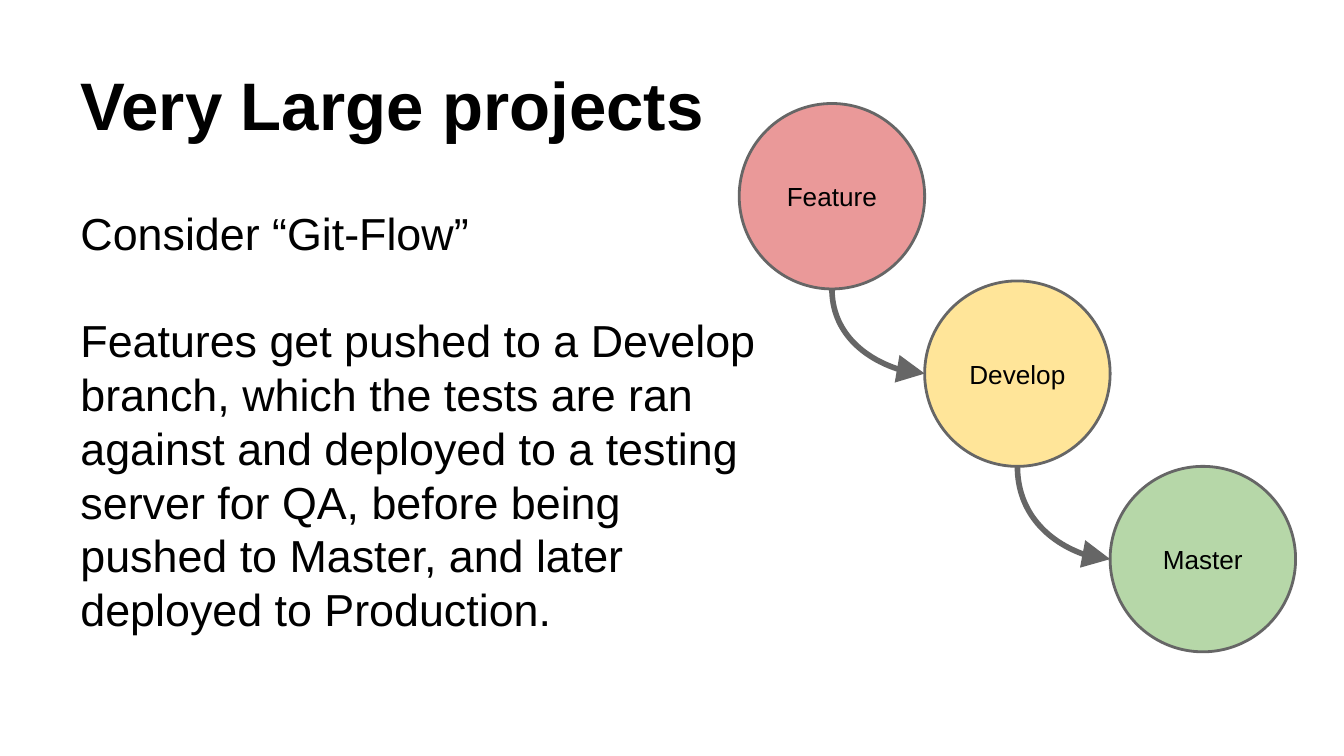
from dataclasses import dataclass

import lxml.etree
import pptx
import pptx.dml.color
import pptx.enum.shapes
import pptx.enum.text
import pptx.oxml.ns
import pptx.util

Inches = pptx.util.Inches
Pt = pptx.util.Pt
qn = pptx.oxml.ns.qn
PP_ALIGN = pptx.enum.text.PP_ALIGN
ANCHOR = pptx.enum.text.MSO_ANCHOR

SLIDE_WIDTH = 10
SLIDE_HEIGHT = SLIDE_WIDTH * 9 / 16
FONT = "Arial"
BLACK = "000000"
GRAY = "666666"
DIAMETER = 1.38
RADIUS = DIAMETER / 2
INSET = 0.1


@dataclass(frozen=True)
class Branch:
    name: str
    left: float
    top: float
    fill: str


@dataclass(frozen=True)
class TextBlock:
    left: float
    top: float
    width: float
    height: float
    paragraphs: tuple[str, ...]
    size: float
    bold: bool = False
    anchor: ANCHOR = ANCHOR.TOP
    top_inset: float = INSET
    line_pitch: float | None = None


BRANCHES = [
    Branch("Feature", 5.5, 0.77, "EA9999"),
    Branch("Develop", 5.5 + DIAMETER, 2.09, "FFE599"),
    Branch("Master", 5.5 + 2 * DIAMETER, 3.47, "B6D7A8"),
]

HEADING = TextBlock(
    0.5, 0.23, 9, 0.94, ("Very Large projects",), 36, bold=True, anchor=ANCHOR.BOTTOM
)
ADVICE = TextBlock(
    0.5, 0.93, 5.25, 4.46,
    (
        "Consider “Git-Flow”",
        "Features get pushed to a Develop branch, which the tests are ran against "
        "and deployed to a testing server for QA, before being pushed to Master, "
        "and later deployed to Production.",
    ),
    24, top_inset=0.6, line_pitch=28.8,
)


def color(value: str) -> pptx.dml.color.RGBColor:
    return pptx.dml.color.RGBColor.from_string(value)


def set_font(paragraph, size: float, bold: bool = False) -> None:
    paragraph.font.name = FONT
    paragraph.font.size = Pt(size)
    paragraph.font.bold = bold
    paragraph.font.color.rgb = color(BLACK)


def set_frame(frame, anchor: ANCHOR, top_inset: float = INSET) -> None:
    frame.word_wrap = True
    frame.vertical_anchor = anchor
    frame.margin_left = frame.margin_right = frame.margin_bottom = Inches(INSET)
    frame.margin_top = Inches(top_inset)


def draw_text(slide, block: TextBlock) -> None:
    frame = slide.shapes.add_textbox(
        Inches(block.left), Inches(block.top), Inches(block.width), Inches(block.height)
    ).text_frame
    set_frame(frame, block.anchor, block.top_inset)
    frame.text = "\n".join(block.paragraphs)
    for index, paragraph in enumerate(frame.paragraphs):
        set_font(paragraph, block.size, block.bold)
        if block.line_pitch:
            paragraph.line_spacing = Pt(block.line_pitch)
            paragraph.space_before = Pt(block.line_pitch if index else 0)


def draw_branch(slide, branch: Branch) -> None:
    circle = slide.shapes.add_shape(
        pptx.enum.shapes.MSO_SHAPE.OVAL,
        Inches(branch.left), Inches(branch.top), Inches(DIAMETER), Inches(DIAMETER),
    )
    circle.shadow.inherit = False
    circle.fill.solid()
    circle.fill.fore_color.rgb = color(branch.fill)
    circle.line.color.rgb = color(GRAY)
    circle.line.width = Pt(1.5)
    set_frame(circle.text_frame, ANCHOR.MIDDLE)
    label = circle.text_frame.paragraphs[0]
    label.text = branch.name
    label.alignment = PP_ALIGN.CENTER
    set_font(label, 14)


def draw_merge(slide, source: Branch, target: Branch) -> None:
    start_x, start_y = source.left + RADIUS, source.top + DIAMETER
    end_x, end_y = target.left, target.top + RADIUS
    center_x, center_y = (start_x + end_x) / 2, (start_y + end_y) / 2
    half_run, half_drop = (end_x - start_x) / 2, (end_y - start_y) / 2
    merge = slide.shapes.add_connector(
        pptx.enum.shapes.MSO_CONNECTOR.CURVE,
        Inches(center_x + half_drop), Inches(center_y - half_run),
        Inches(center_x - half_drop), Inches(center_y + half_run),
    )
    merge.line.color.rgb = color(GRAY)
    merge.line.width = Pt(3)
    properties = merge._element.spPr
    properties.find(qn("a:xfrm")).set("rot", str(270 * 60000))
    properties.find(qn("a:prstGeom")).set("prst", "curvedConnector2")
    lxml.etree.SubElement(
        properties.find(qn("a:ln")), qn("a:tailEnd"), type="triangle", w="lg", len="lg"
    )
    lxml.etree.SubElement(properties, qn("a:effectLst"))


def main() -> None:
    presentation = pptx.Presentation()
    presentation.slide_width = Inches(SLIDE_WIDTH)
    presentation.slide_height = Inches(SLIDE_HEIGHT)
    slide = presentation.slides.add_slide(presentation.slide_layouts[6])
    for block in (HEADING, ADVICE):
        draw_text(slide, block)
    for branch in BRANCHES:
        draw_branch(slide, branch)
    for source, target in zip(BRANCHES, BRANCHES[1:]):
        draw_merge(slide, source, target)
    presentation.save("out.pptx")


if __name__ == "__main__":
    main()
